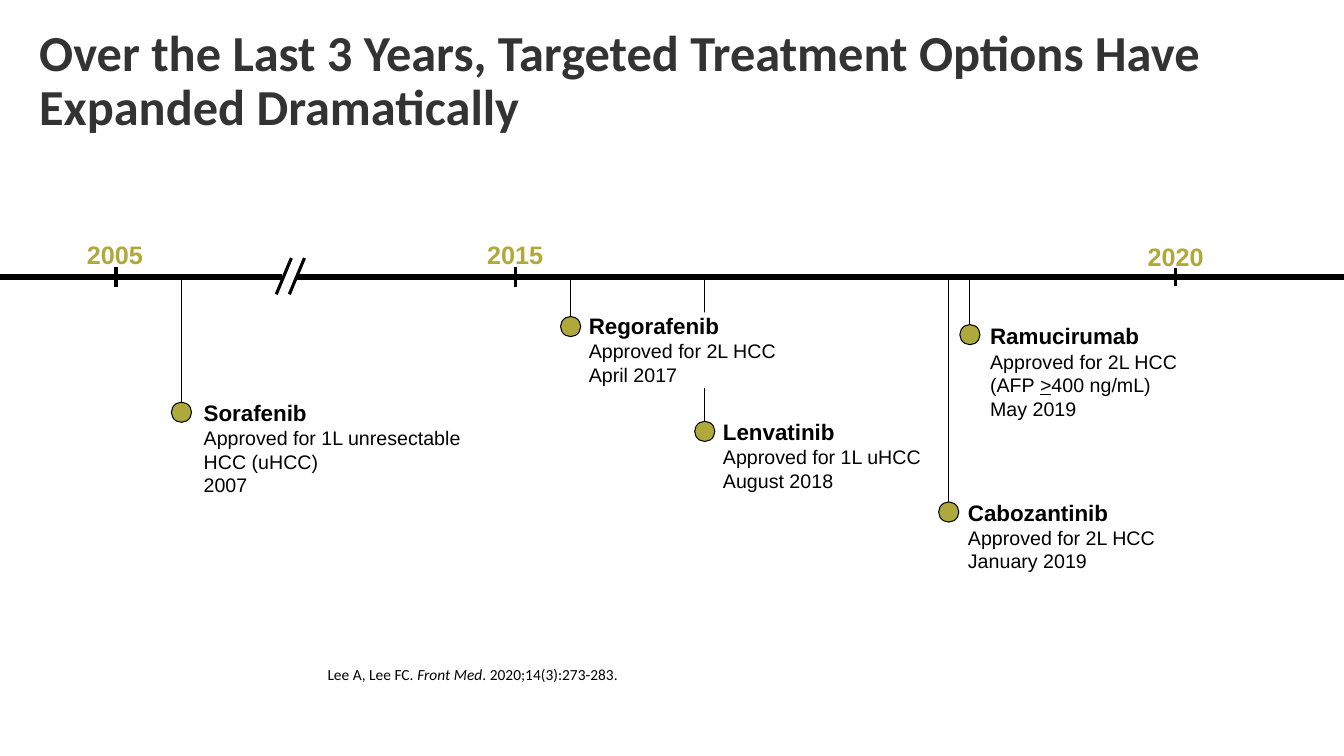
from pptx import Presentation
from pptx.dml.color import RGBColor
from pptx.enum.shapes import MSO_CONNECTOR, MSO_SHAPE
from pptx.enum.text import MSO_ANCHOR, PP_ALIGN
from pptx.oxml.ns import qn
from pptx.util import Pt
from lxml import etree

LINE = MSO_CONNECTOR.STRAIGHT
OVAL, RECT = MSO_SHAPE.OVAL, MSO_SHAPE.RECTANGLE
TOP, MID = MSO_ANCHOR.TOP, MSO_ANCHOR.MIDDLE
LEFT, CENTER = PP_ALIGN.LEFT, PP_ALIGN.CENTER

BLACK = RGBColor(0, 0, 0)
WHITE = RGBColor(255, 255, 255)
GRAY = RGBColor(0x33, 0x33, 0x33)
OLIVE = RGBColor(0xAF, 0xA8, 0x3B)

PX = 9144
WIDE, HIGH = 1333, 750
AXIS = 275
DOT = 20

YEARS = [
    ("2005", 115, (64, 237, 100, 30), TOP, 10, None),
    ("2015", 511, (461, 237, 100, 30), TOP, 10, None),
    ("2020", 1166, (1128, 240, 76, 29), MID, 9, WHITE),
]

DRUGS = [
    ("Sorafenib", (180, 399), (202, 396, 301, 95), None,
     [["Approved for 1L unresectable"], ["HCC (uHCC)\n2007"]]),
    ("Cabozantinib", (941, 498), (960, 495, 355, 100), None,
     [["Approved for 2L HCC\nJanuary 2019"]]),
    ("Lenvatinib", (699, 418), (717, 415, 205, 75), WHITE,
     [["Approved for 1L uHCC\nAugust 2018"]]),
    ("Regorafenib", (566, 314), (584, 310, 224, 75), WHITE,
     [["Approved for 2L HCC\nApril 2017"]]),
    ("Ramucirumab", (962, 322), (982, 320, 268, 95), WHITE,
     [["Approved for 2L HCC"], ["(AFP ", ">", "400 ng/mL)\nMay 2019"]]),
]


def scale(*sizes):
    return [size * PX for size in sizes]


def add_line(slide, x1, y1, x2, y2, width):
    line = slide.shapes.add_connector(LINE, *scale(x1, y1, x2, y2))
    line.line.color.rgb = BLACK
    line.line.width = Pt(width)
    etree.SubElement(line._element.spPr, qn("a:effectLst"))


def add_form(slide, kind, box, fill):
    form = slide.shapes.add_shape(kind, *scale(*box))
    form.shadow.inherit = False
    form.fill.solid()
    form.fill.fore_color.rgb = fill
    return form


def add_box(slide, box, anchor=TOP, inset=(0, 0), fill=None):
    if fill is None:
        shape = slide.shapes.add_textbox(*scale(*box))
    else:
        shape = add_form(slide, RECT, box, fill)
        shape.line.fill.background()
    frame = shape.text_frame
    frame.word_wrap = True
    frame.vertical_anchor = anchor
    frame.margin_left = frame.margin_right = inset[0] * PX
    frame.margin_top = frame.margin_bottom = inset[1] * PX
    return frame


def add_run(para, text, size, color=BLACK, face="Arial", bold=False):
    run = para.add_run()
    run.text = text
    font = run.font
    font.name, font.size, font.bold = face, Pt(size), bold
    font.color.rgb = color
    return run


def add_title(slide, box):
    para = add_box(slide, box, MID, (10, 5)).paragraphs[0]
    para.line_spacing = 0.9
    add_run(para, "Over the Last 3 Years, Targeted Treatment Options Have "
            "Expanded Dramatically", 36, GRAY, "Calibri", True)


def add_cite(slide, box):
    para = add_box(slide, box, TOP, (10, 5)).paragraphs[0]
    para.line_spacing = 0.9
    for text in ("Lee A, Lee FC. ", "Front Med", ". 2020;14(3):273-283."):
        run = add_run(para, text, 11, face="Calibri")
        run.font.italic = text == "Front Med"


def add_axis(slide, left, right):
    add_line(slide, left, AXIS, 280, AXIS, 4.5)
    add_line(slide, 294, AXIS, right, AXIS, 4.5)
    for x in (274, 287):
        add_line(slide, x, 292, x + 15, 256, 2.25)
    for year, x, box, anchor, half, fill in YEARS:
        para = add_box(slide, box, anchor, fill=fill).paragraphs[0]
        para.alignment = CENTER
        add_run(para, year, 18, OLIVE, bold=True)
        add_line(slide, x, AXIS - half, x, AXIS + half, 2.25)


def add_drug(slide, name, pin, box, fill, notes):
    x, y = pin
    add_line(slide, x, AXIS + 2, x, y, 0.75)
    dot = add_form(slide, OVAL, (x - DOT // 2, y, DOT, DOT), OLIVE)
    dot.line.color.rgb = BLACK
    dot.line.width = Pt(0.75)
    frame = add_box(slide, box, fill=fill)
    head = frame.paragraphs[0]
    head.alignment = LEFT
    add_run(head, name, 16, bold=True)
    for note in notes:
        para = frame.add_paragraph()
        para.alignment = LEFT
        for part in note:
            for i, text in enumerate(part.split("\n")):
                if i:
                    para.add_line_break()
                run = add_run(para, text, 14)
                if text == ">":
                    run.font.underline = True


def main():
    deck = Presentation()
    deck.slide_width, deck.slide_height = scale(WIDE, HIGH)
    slide = deck.slides.add_slide(deck.slide_layouts[6])
    add_title(slide, (29, 19, 1278, 125))
    add_cite(slide, (315, 657, 992, 80))
    add_axis(slide, 0, WIDE)
    for drug in DRUGS:
        add_drug(slide, *drug)
    deck.save("out.pptx")


if __name__ == "__main__":
    main()
